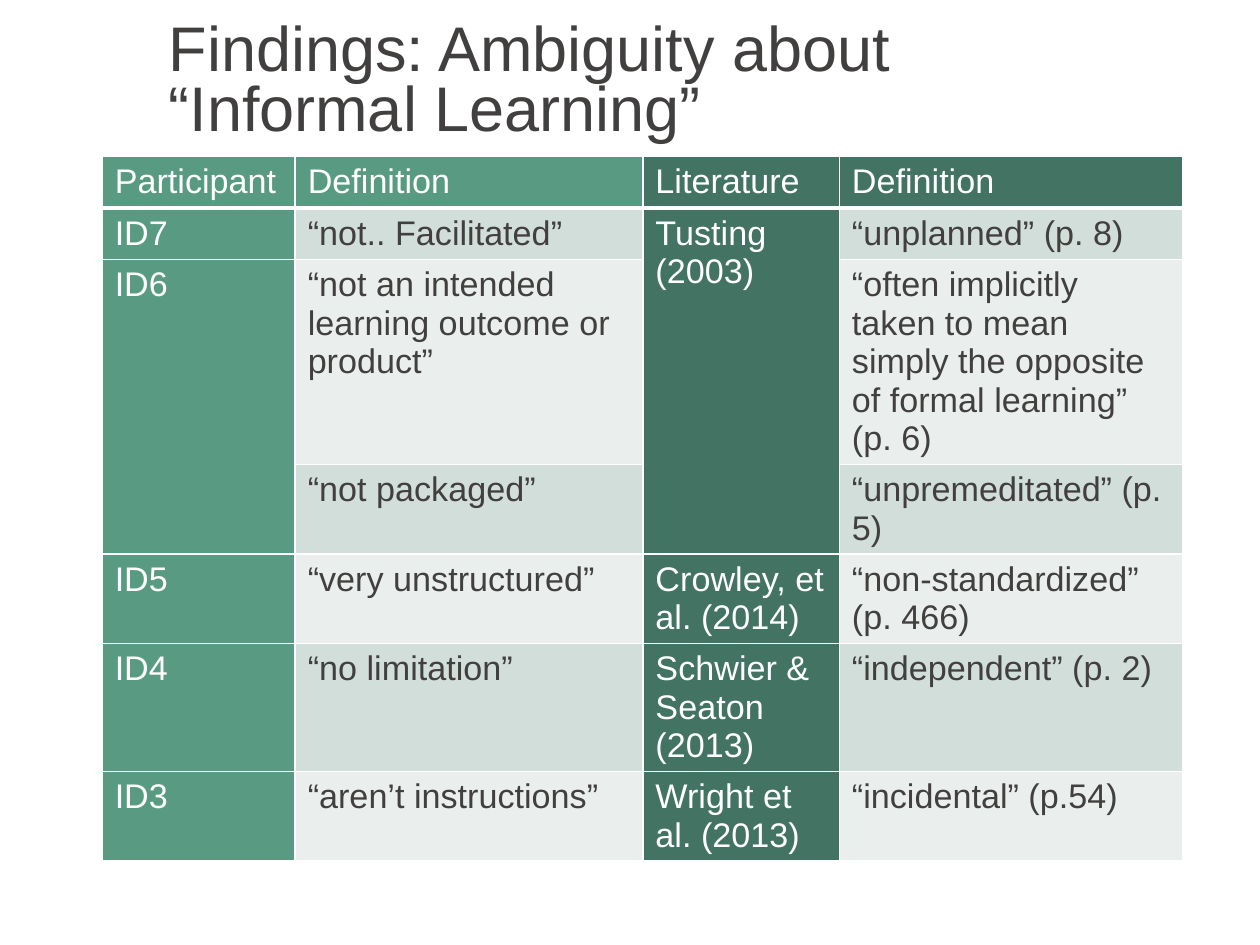
import pptx
import pptx.dml.color
import pptx.enum.text
import pptx.oxml
import pptx.oxml.ns
import pptx.util
from dataclasses import dataclass

Cm = pptx.util.Cm
Pt = pptx.util.Pt


@dataclass(frozen=True)
class Theme:
    font: str = "Arial"
    ink: str = "423F3F"
    white: str = "FFFFFF"
    participant: str = "599A83"
    literature: str = "437362"
    bands: tuple = ("D1DED9", "EAEFED")
    title_size: float = 36
    cell_size: float = 19.5
    rule: float = 1
    header_rule: float = 3


class SlideBuilder:
    def __init__(self, deck, theme):
        self.theme = theme
        self.page = deck.slides.add_slide(deck.slide_layouts[5])

    def color(self, value):
        return pptx.dml.color.RGBColor.from_string(value)

    def add_span(self, para, text, size, color):
        span = para.add_run()
        span.text = text
        span.font.name = self.theme.font
        span.font.size = Pt(size)
        span.font.color.rgb = self.color(color)

    def title(self, text, left, top, width, height):
        box = self.page.shapes.title
        box.left, box.top = Cm(left), Cm(top)
        box.width, box.height = Cm(width), Cm(height)
        frame = box.text_frame
        frame.margin_left = frame.margin_right = 0
        frame.margin_top = frame.margin_bottom = 0
        frame.word_wrap = True
        frame.auto_size = pptx.enum.text.MSO_AUTO_SIZE.NONE
        frame.vertical_anchor = pptx.enum.text.MSO_ANCHOR.MIDDLE
        para = frame.paragraphs[0]
        para.alignment = pptx.enum.text.PP_ALIGN.LEFT
        para.line_spacing = 0.8
        self.add_span(para, text, self.theme.title_size, self.theme.ink)

    def borders(self, cell, top, bottom):
        rule = self.theme.rule
        widths = {"lnL": rule, "lnR": rule, "lnT": top, "lnB": bottom}
        properties = cell._tc.get_or_add_tcPr()
        for position, (side, width) in enumerate(widths.items()):
            line = pptx.oxml.parse_xml(
                f'<a:{side} {pptx.oxml.ns.nsdecls("a")} w="{Pt(width)}">'
                f'<a:solidFill><a:srgbClr val="{self.theme.white}"/></a:solidFill>'
                f'</a:{side}>'
            )
            properties.insert(position, line)

    def cell(self, cell, text, row, column):
        theme = self.theme
        accent = theme.participant if column < 2 else theme.literature
        solid = row == 0 or column % 2 == 0
        fill = accent if solid else theme.bands[(row - 1) % 2]
        cell.fill.solid()
        cell.fill.fore_color.rgb = self.color(fill)
        self.borders(
            cell,
            theme.header_rule if row == 1 else theme.rule,
            theme.header_rule if row == 0 else theme.rule,
        )
        frame = cell.text_frame
        for index, line in enumerate(text.splitlines()):
            para = frame.add_paragraph() if index else frame.paragraphs[0]
            self.add_span(para, line, theme.cell_size, theme.white if solid else theme.ink)

    def table(self, rows, merges, left, top, widths, row_height, height):
        box = self.page.shapes.add_table(
            len(rows), len(widths), Cm(left), Cm(top), Cm(sum(widths)), Cm(height)
        )
        grid = box.table
        for column, width in zip(grid.columns, widths):
            column.width = Cm(width)
        for row in grid.rows:
            row.height = Cm(row_height)
        for row, texts in enumerate(rows):
            for column, text in enumerate(texts):
                self.cell(grid.cell(row, column), text, row, column)
        for column, first, last in merges:
            grid.cell(first, column).merge(grid.cell(last, column))
        box.height = Cm(height)


FINDINGS = [
    ("Participant", "Definition", "Literature", "Definition"),
    ("ID7", "“not.. Facilitated”", "Tusting (2003)", "“unplanned” (p. 8)"),
    ("ID6", "“not an intended learning outcome or product”", "",
     "“often implicitly taken to mean simply the opposite of formal learning” (p. 6)"),
    ("", "“not packaged”", "", "“unpremeditated” (p. 5)"),
    ("ID5", "“very unstructured”", "Crowley, et al. (2014)", "“non-standardized”\n(p. 466)"),
    ("ID4", "“no limitation”", "Schwier & Seaton (2013)", "“independent” (p. 2)"),
    ("ID3", "“aren’t instructions”", "Wright et al. (2013)", "“incidental” (p.54)"),
]


def main():
    deck = pptx.Presentation()
    deck.slide_width, deck.slide_height = Cm(25.4), Cm(19.05)
    builder = SlideBuilder(deck, Theme())
    builder.title("Findings: Ambiguity about “Informal Learning”", 3.4, 0.58, 18.06, 2.21)
    builder.table(
        FINDINGS,
        merges=[(2, 1, 3), (0, 2, 3)],
        left=2.06,
        top=3.15,
        widths=[3.89, 7.01, 3.96, 6.93],
        row_height=1.04,
        height=12.22,
    )
    deck.save("out.pptx")


if __name__ == "__main__":
    main()
